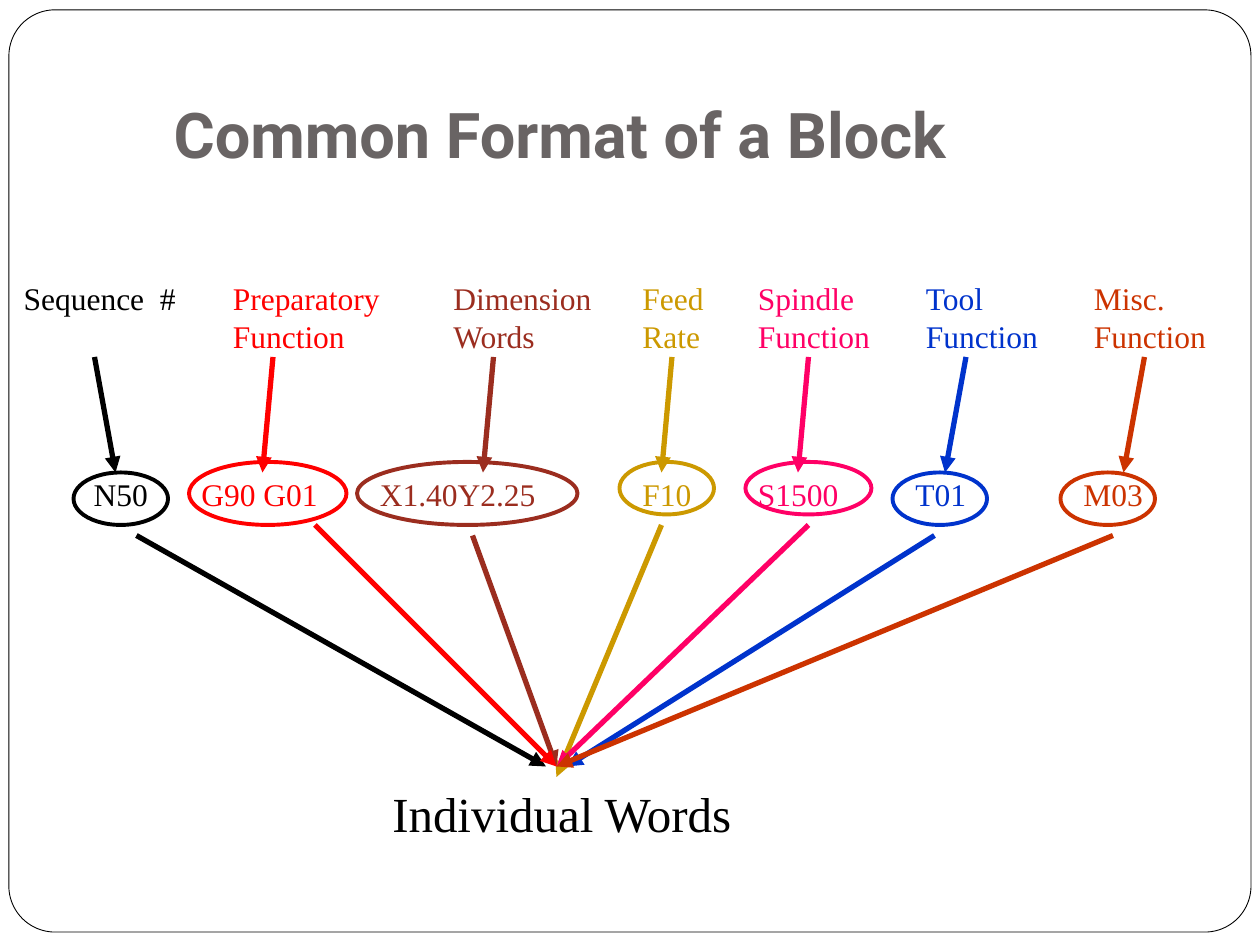
from collections import namedtuple
from dataclasses import dataclass

from lxml import etree
from pptx import Presentation
from pptx import util as u
from pptx.dml.color import RGBColor
from pptx.enum import shapes, text
from pptx.oxml.ns import qn

CM_PER_STEP = 2.54 / 12


@dataclass(frozen=True)
class Theme:
    ink: str = "000000"
    paper: str = "FFFFFF"
    heading: str = "696464"
    heading_font: str = "Roboto"
    body_font: str = "Times New Roman"
    heading_size: int = 36
    label_size: int = 18
    summary_size: int = 28
    frame_width: float = 0.5
    oval_width: float = 2.25
    arrow_width: float = 3
    words: tuple = ("000000", "FF0000", "9B2D1F", "CC9900", "FF0066", "0033CC", "CC3300")


Word = namedtuple("Word", "label label_span code code_span pointer oval ray")

WORDS = [
    Word("Sequence  #", (1, 17), "N50", (3, 17), (9, 11), (7, 45, 9, 5), (13, 51, 52, 73)),
    Word("Preparatory Function", (21, 19), "G90 G01", (18, 17), (26, 25), (18, 44, 15, 6), (30, 50, 53, 73)),
    Word("Dimension Words", (42, 17), "X1.40Y2.25", (35, 25), (47, 46), (34, 44, 21, 6), (45, 51, 53, 73)),
    Word("Feed Rate", (60, 10), "F10", (60, 11), (64, 63), (59, 44, 9, 5), (63, 50, 53, 74)),
    Word("Spindle Function", (71, 14), "S1500", (71, 17), (77, 76), (71, 44, 12, 5), (77, 50, 53, 73)),
    Word("Tool Function", (87, 14), "T01", (86, 15), (92, 90), (85, 45, 9, 5), (89, 51, 54, 73)),
    Word("Misc. Function", (103, 17), "M03", (102, 14), (109, 107), (101, 45, 9, 5), (106, 51, 53, 73)),
]
RAY_ORDER = (0, 3, 2, 1, 5, 4, 6)


def steps(*counts):
    return [u.Cm(count * CM_PER_STEP) for count in counts]


class SlideWriter:
    def __init__(self, slide, theme):
        self.slide = slide
        self.theme = theme

    def text(self, content, place, size, color, font=None, bold=False, centred=False, bottom=False):
        box = self.slide.shapes.add_textbox(*place)
        frame = box.text_frame
        frame.word_wrap = True
        frame.text = content
        if bottom:
            frame.vertical_anchor = text.MSO_ANCHOR.BOTTOM
            frame.margin_bottom = u.Cm(0.25)
        para = frame.paragraphs[0]
        para.alignment = text.PP_ALIGN.CENTER if centred else text.PP_ALIGN.LEFT
        style = para.runs[0].font
        style.name = font or self.theme.body_font
        style.size = u.Pt(size)
        style.bold = bold
        style.color.rgb = RGBColor.from_string(color)

    def outline(self, kind, place, color, width, fill=None):
        shape = self.slide.shapes.add_shape(kind, *place)
        shape.shadow.inherit = False
        if fill:
            shape.fill.solid()
            shape.fill.fore_color.rgb = RGBColor.from_string(fill)
        else:
            shape.fill.background()
        shape.line.color.rgb = RGBColor.from_string(color)
        shape.line.width = u.Pt(width)
        return shape

    def arrow(self, ends, color):
        arrow = self.slide.shapes.add_connector(shapes.MSO_CONNECTOR.STRAIGHT, *ends)
        arrow.line.color.rgb = RGBColor.from_string(color)
        arrow.line.width = u.Pt(self.theme.arrow_width)
        etree.SubElement(arrow.line._get_or_add_ln(), qn("a:tailEnd"), type="triangle")
        etree.SubElement(arrow._element.spPr, qn("a:effectLst"))


def main():
    theme = Theme()
    deck = Presentation()
    deck.slide_width, deck.slide_height = u.Cm(25.4), u.Cm(19.05)
    page = SlideWriter(deck.slides.add_slide(deck.slide_layouts[6]), theme)

    border = page.outline(
        shapes.MSO_SHAPE.ROUNDED_RECTANGLE,
        (u.Cm(0.18), u.Cm(0.2), u.Cm(25.04), u.Cm(18.59)),
        theme.ink, theme.frame_width, theme.paper)
    border.adjustments[0] = 0.05
    page.text("Common Format of a Block",
              (u.Cm(3.25), u.Cm(0.53), u.Cm(18.08), u.Cm(3.18)),
              theme.heading_size, theme.heading, theme.heading_font, bold=True, bottom=True)

    colored_words = list(zip(WORDS, theme.words))
    for index, (word, color) in enumerate(colored_words):
        for content, (left, width), top, height in (
                (word.label, word.label_span, 5.5, 1.78),
                (word.code, word.code_span, 9.45, 1.02)):
            x, wide = steps(left, width)
            page.text(content, (x, u.Cm(top), wide, u.Cm(height)),
                      theme.label_size, color, centred=index == 0)

    for word, color in colored_words:
        start, end = word.pointer
        page.arrow(steps(start, 34, end, 45), color)
        page.outline(shapes.MSO_SHAPE.OVAL, steps(*word.oval), color, theme.oval_width)

    for index in RAY_ORDER:
        word, color = colored_words[index]
        page.arrow(steps(*word.ray), color)

    page.text("Individual Words", steps(34, 74, 39, 7),
              theme.summary_size, theme.ink, centred=True)
    deck.save("out.pptx")


if __name__ == "__main__":
    main()
